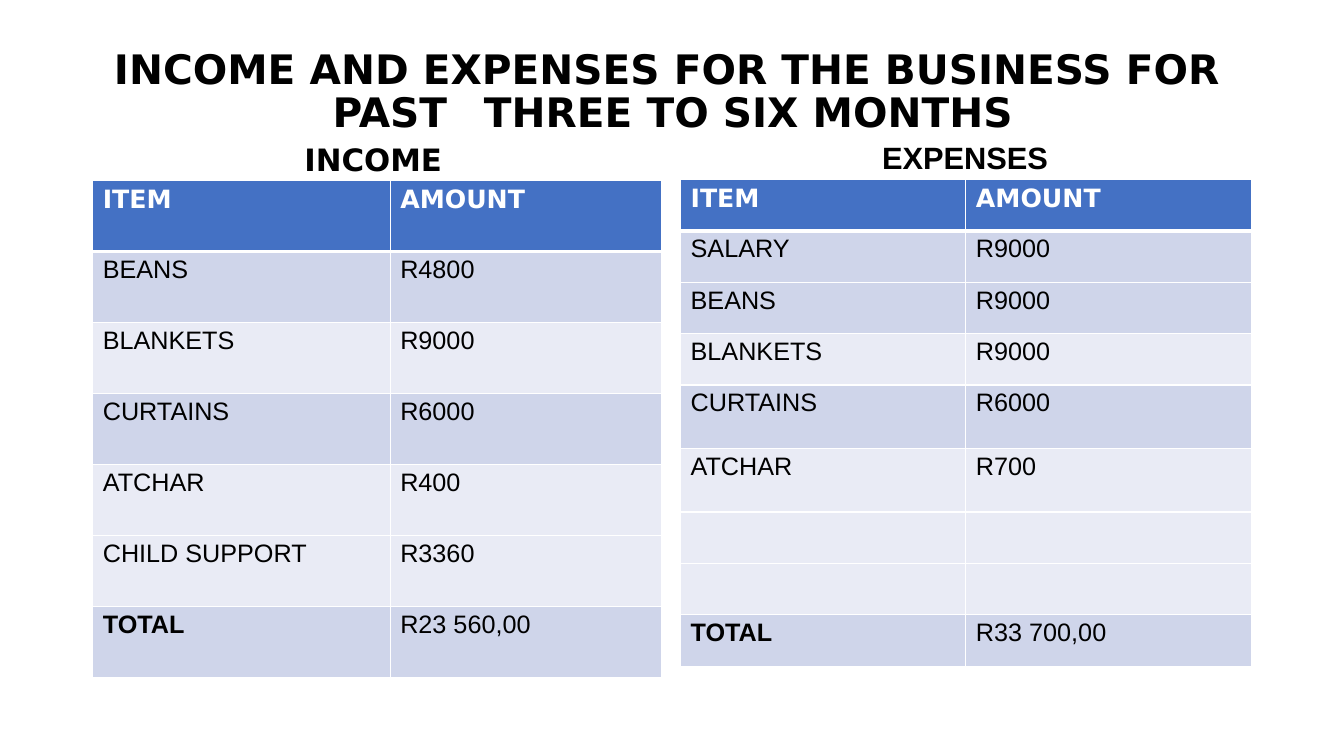
from lxml import etree
from pptx import Presentation
from pptx import util as u
from pptx.dml.color import RGBColor
from pptx.enum import text
from pptx.oxml import ns

WIDTH, HEIGHT = u.Inches(13.33), u.Inches(7.5)
BLACK, WHITE = RGBColor(0, 0, 0), RGBColor(255, 255, 255)
HEADER_BLUE = RGBColor(0x44, 0x71, 0xC4)
BAND_DARK = RGBColor(0xCF, 0xD5, 0xEA)
BAND_LIGHT = RGBColor(0xE9, 0xEB, 0xF5)
DISPLAY, PLAIN = "DejaVu Sans", "Arial"

INCOME = [("ITEM", "AMOUNT"), ("BEANS", "R4800"), ("BLANKETS", "R9000"),
          ("CURTAINS", "R6000"), ("ATCHAR", "R400"),
          ("CHILD SUPPORT", "R3360"), ("TOTAL", "R23 560,00")]
EXPENSES = [("ITEM", "AMOUNT"), ("SALARY", "R9000"), ("BEANS", "R9000"),
            ("BLANKETS", "R9000"), ("CURTAINS", "R6000"), ("ATCHAR", "R700"),
            ("", ""), ("", ""), ("TOTAL", "R33 700,00")]
DARK_ITEMS = {"SALARY", "BEANS", "CURTAINS", "TOTAL"}


def style(paragraph, size, face, color=BLACK, bold=True):
    font = paragraph.font
    font.size, font.name, font.bold = u.Pt(size), face, bold
    font.color.rgb = color


def set_margins(box, left=0, top=0):
    box.margin_left, box.margin_top = u.Inches(left), u.Inches(top)
    box.margin_right = box.margin_bottom = 0


def place(shape, left, top, width, height):
    shape.left, shape.top = u.Inches(left), u.Inches(top)
    shape.width, shape.height = u.Inches(width), u.Inches(height)


def add_title(slide, words):
    title = slide.shapes.title
    place(title, 1.12, 0.41, 11.09, 0.95)
    frame = title.text_frame
    set_margins(frame, top=0.07)
    frame.word_wrap = True
    frame.auto_size = text.MSO_AUTO_SIZE.NONE
    frame.vertical_anchor = text.MSO_ANCHOR.TOP
    paragraph = frame.paragraphs[0]
    paragraph.text = words
    paragraph.alignment = text.PP_ALIGN.LEFT
    # Hanging indent and tab stop of the second line
    props = paragraph._p.get_or_add_pPr()
    props.set("marL", str(u.Inches(2.18)))
    props.set("indent", str(u.Inches(-2.17)))
    tabs = etree.SubElement(props, ns.qn("a:tabLst"))
    etree.SubElement(tabs, ns.qn("a:tab"), pos=str(u.Inches(3.62)), algn="l")
    paragraph.line_spacing = u.Pt(31.3)
    style(paragraph, 29, DISPLAY)


def add_heading(slide, words, face, left, top, width):
    box = slide.shapes.add_textbox(0, 0, 0, 0)
    place(box, left, top, width, 0.39)
    frame = box.text_frame
    set_margins(frame, top=0.01)
    frame.word_wrap = True
    paragraph = frame.paragraphs[0]
    paragraph.text = words
    style(paragraph, 22, face)


def add_borders(cell, top, bottom):
    props = cell._tc.get_or_add_tcPr()
    widths = {"lnL": 1, "lnR": 1, "lnT": top, "lnB": bottom}
    for index, (side, points) in enumerate(widths.items()):
        line = etree.Element(ns.qn(f"a:{side}"), w=str(u.Pt(points)))
        fill = etree.SubElement(line, ns.qn("a:solidFill"))
        etree.SubElement(fill, ns.qn("a:srgbClr"), val=str(WHITE))
        props.insert(index, line)


def fill_cell(cell, words, row, column, band):
    header = row == 0
    set_margins(cell, left=0.1, top=0.05 if header else 0.04)
    cell.fill.solid()
    cell.fill.fore_color.rgb = HEADER_BLUE if header else band
    add_borders(cell, top=3 if row == 1 else 1, bottom=3 if header else 1)
    paragraph = cell.text_frame.paragraphs[0]
    paragraph.text = words
    if header:
        style(paragraph, 18, DISPLAY, WHITE)
    else:
        style(paragraph, 18, PLAIN, bold=words == "TOTAL" and column == 0)


def add_ledger(slide, entries, left, top, columns, heights):
    frame = slide.shapes.add_table(
        len(entries), len(columns), u.Inches(left), u.Inches(top),
        u.Inches(sum(columns)), u.Inches(sum(heights)))
    ledger = frame.table
    for column, width in zip(ledger.columns, columns):
        column.width = u.Inches(width)
    for row, (entry, height) in enumerate(zip(entries, heights)):
        ledger.rows[row].height = u.Inches(height)
        band = BAND_DARK if entry[0] in DARK_ITEMS else BAND_LIGHT
        for column, words in enumerate(entry):
            fill_cell(ledger.cell(row, column), words, row, column, band)


def main():
    deck = Presentation()
    deck.slide_width, deck.slide_height = WIDTH, HEIGHT
    slide = deck.slides.add_slide(deck.slide_layouts[5])
    add_title(slide, "INCOME AND EXPENSES FOR THE BUSINESS FOR PAST\t"
                     "THREE TO SIX MONTHS")
    # Income on the left
    add_heading(slide, "INCOME", DISPLAY, 3.02, 1.39, 1.43)
    add_ledger(slide, INCOME, 0.92, 1.79, [2.95, 2.69],
               [0.705] * len(INCOME))
    # Expenses on the right
    add_heading(slide, "EXPENSES", PLAIN, 8.75, 1.37, 1.67)
    tall = {"CURTAINS", "ATCHAR"}
    add_ledger(slide, EXPENSES, 6.75, 1.78, [2.83, 2.83],
               [0.63 if item in tall else 0.51 for item, _ in EXPENSES])
    deck.save("out.pptx")


if __name__ == "__main__":
    main()
